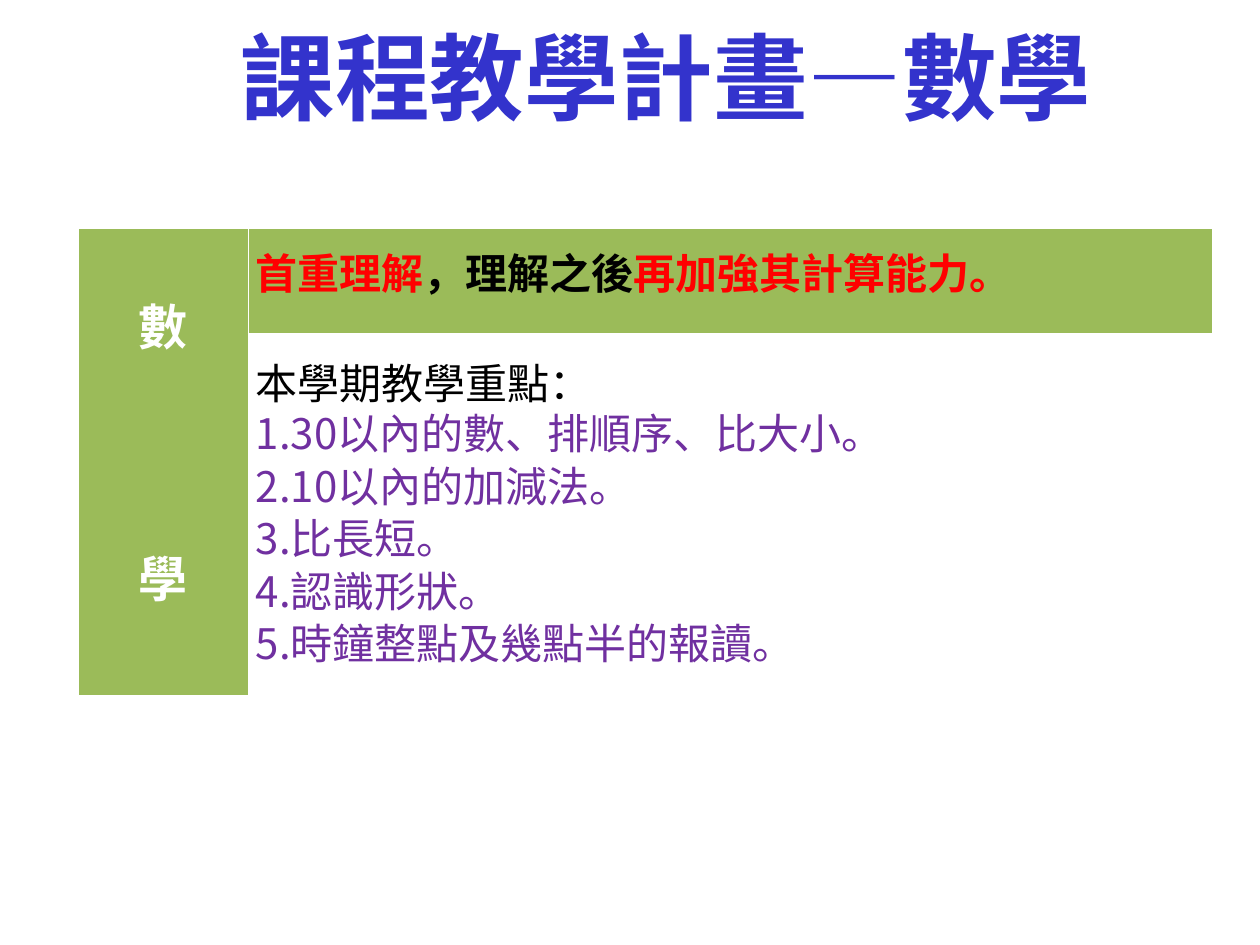
import pptx
import pptx.dml.color
import pptx.enum.text
import pptx.oxml
import pptx.oxml.ns
import pptx.util
from dataclasses import dataclass
from lxml import etree

Cm, Pt = pptx.util.Cm, pptx.util.Pt
Align, Anchor = pptx.enum.text.PP_ALIGN, pptx.enum.text.MSO_ANCHOR
rgb = pptx.dml.color.RGBColor.from_string
qn = pptx.oxml.ns.qn


@dataclass
class Theme:
    blue: str = "3333CC"
    green: str = "9BBB59"
    red: str = "FF0000"
    purple: str = "7030A0"
    black: str = "000000"
    white: str = "FFFFFF"
    head: int = 54
    side: int = 28
    body: int = 24
    sans: str = "DejaVu Sans"
    cjk: str = "Noto Sans CJK SC"
    trad: str = "Noto Sans CJK TC"


theme = Theme()


def style(font, name, size, color, bold):
    """Set the face for both Latin and East Asian text."""
    font.name, font.size, font.bold = name, Pt(size), bold
    if color:
        font.color.rgb = rgb(color)
    etree.SubElement(font._element if hasattr(font, "_element") else font._rPr,
                     qn("a:ea"), typeface=name)


def dress(cell, fill):
    """Give a cell its fill, margins, anchor and white borders."""
    cell.margin_left = cell.margin_right = Cm(0.15)
    cell.margin_top = cell.margin_bottom = 0
    cell.vertical_anchor = Anchor.MIDDLE
    props = cell._tc.get_or_add_tcPr()
    for side in ("lnL", "lnR", "lnT", "lnB"):
        line = etree.SubElement(props, qn("a:" + side), w=str(Pt(1)))
        paint = etree.SubElement(line, qn("a:solidFill"))
        etree.SubElement(paint, qn("a:srgbClr"), val=theme.white)
    cell.fill.solid()
    cell.fill.fore_color.rgb = rgb(fill)


deck = pptx.Presentation()
deck.slide_width, deck.slide_height = Cm(25.4), Cm(19.05)
slide = deck.slides.add_slide(deck.slide_layouts[5])

# Title
title = slide.shapes.title
title.left, title.top, title.width, title.height = Cm(4.6), Cm(0.53), Cm(17.96), Cm(2.29)
frame = title.text_frame
frame.text = "課程教學計畫—數學"
frame.vertical_anchor = Anchor.BOTTOM
frame.auto_size = pptx.enum.text.MSO_AUTO_SIZE.NONE
para = frame.paragraphs[0]
para.alignment, para.line_spacing = Align.LEFT, 0.9
style(para.font, theme.cjk, theme.head, theme.blue, True)

# Table
table = slide.shapes.add_table(2, 2, Cm(1.58), Cm(4.6), Cm(22.86), Cm(9.42)).table
for col, width in zip(table.columns, (3.43, 19.43)):
    col.width = Cm(width)
for row, height in zip(table.rows, (2.13, 7.29)):
    row.height = Cm(height)
for r, c, fill in ((0, 0, theme.green), (1, 0, theme.green),
                   (0, 1, theme.green), (1, 1, theme.white)):
    dress(table.cell(r, c), fill)
table.cell(0, 0).merge(table.cell(1, 0))

# Subject, one character above the other
frame = table.cell(0, 0).text_frame
frame.text = "數\n學"
for para in frame.paragraphs:
    para.alignment, para.line_spacing = Align.CENTER, Pt(24)
    style(para.font, theme.sans, theme.side, theme.white, True)
frame.paragraphs[1].space_before = Pt(5 * 24)

# Principle
para = table.cell(0, 1).text_frame.paragraphs[0]
para.line_spacing = Pt(24)
style(para.font, theme.trad, theme.body, None, True)
for text, color in (("首重理解", theme.red), ("，理解之後", theme.black),
                    ("再加強其計算能力。", theme.red)):
    run = para.add_run()
    run.text = text
    run.font.color.rgb = rgb(color)

# Key points of the term
points = ("30以內的數、排順序、比大小。", "10以內的加減法。", "比長短。",
          "認識形狀。", "時鐘整點及幾點半的報讀。")
lines = ["本學期教學重點："] + [f"{n}.{text}" for n, text in enumerate(points, 1)]
frame = table.cell(1, 1).text_frame
frame.text = "\n".join(lines)
for n, para in enumerate(frame.paragraphs):
    para.line_spacing = Pt(30)
    name, color = (theme.cjk, theme.purple) if n else (theme.sans, theme.black)
    style(para.font, name, theme.body, color, False)

deck.save("out.pptx")
